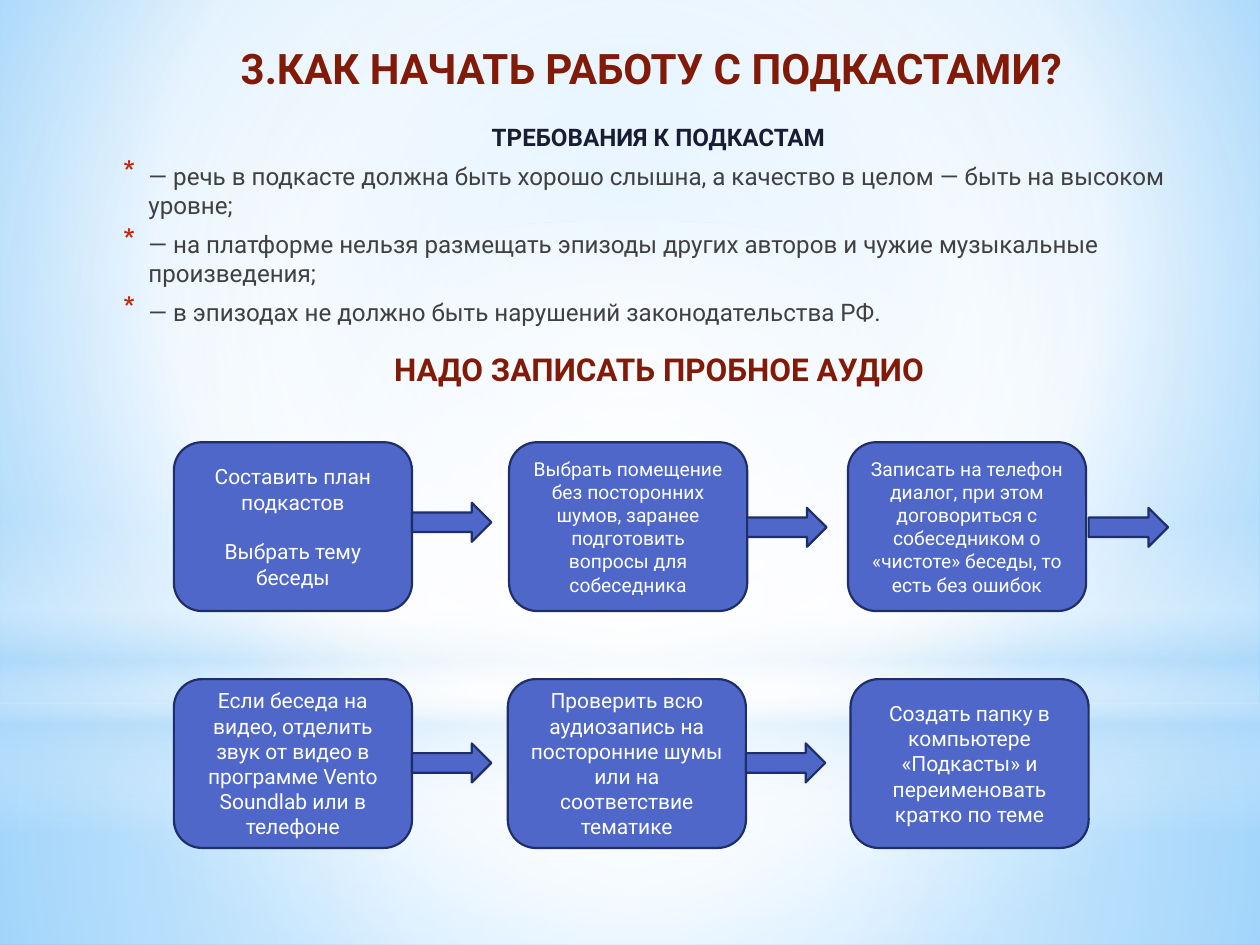
from dataclasses import dataclass
from typing import Any, Optional

from pptx import Presentation
from pptx.dml.color import RGBColor
from pptx.enum.shapes import MSO_SHAPE as Preset
from pptx.enum.text import MSO_ANCHOR as Anchor, PP_ALIGN as Align
from pptx.oxml import parse_xml
from pptx.oxml.ns import nsdecls, qn
from pptx.util import Inches, Pt

FONT = "Roboto"
DARK_RED, NAVY, GRAY, WHITE = "821A08", "191D34", "404040", "FFFFFF"
BLUE, OUTLINE, BULLET = "4E67C8", "1F2E69", "C3260C"
SKY = "B4DCFA"
BOX_WIDTH, BOX_HEIGHT = 1.89, 1.34
ARROW_WIDTH, ARROW_HEIGHT = 0.63, 0.31
TOP_ROW, BOTTOM_ROW = 3.51, 5.39


@dataclass
class Stop:
    position: int
    color: str
    opacity: int = 100


@dataclass
class Glow:
    preset: Any
    frame: tuple[float, float, float, float]
    stops: list[Stop]
    center: Optional[tuple[int, int, int, int]] = (50, 50, 50, 50)


@dataclass
class Step:
    left: float
    top: float
    lines: list[str]
    size: float = 12
    arrow_top: Optional[float] = None
    arrow_gap: float = 0


BACKDROP = [Stop(0, "9ED5FF"), Stop(60, WHITE), Stop(100, "5BB9FF")]
GLOWS = [
    Glow(Preset.RECTANGLE, (0, 5.58, 10, 1.92),
         [Stop(0, WHITE, 91), Stop(37, WHITE, 76), Stop(100, SKY, 79)]),
    Glow(Preset.RECTANGLE, (0, 0, 10, 5.58),
         [Stop(0, WHITE, 89), Stop(48, WHITE, 62), Stop(100, SKY, 79)]),
    Glow(Preset.RECTANGLE, (0, 4.12, 10, 2.5),
         [Stop(0, WHITE, 0), Stop(29, WHITE, 30), Stop(45, SKY, 40),
          Stop(55, WHITE, 26), Stop(65, SKY, 60), Stop(100, WHITE, 0)], None),
    Glow(Preset.OVAL, (0, 1.75, 10, 5.58),
         [Stop(0, WHITE), Stop(56, WHITE, 0)]),
]
REQUIREMENTS = [
    "— речь в подкасте должна быть хорошо слышна, а качество в целом — быть на высоком уровне;",
    "— на платформе нельзя размещать эпизоды других авторов и чужие музыкальные произведения;",
    "— в эпизодах не должно быть нарушений законодательства РФ.",
]
STEPS = [
    Step(1.38, TOP_ROW, ["Составить план подкастов", "Выбрать тему беседы"], arrow_top=3.99),
    Step(4.04, TOP_ROW, ["Выбрать помещение без посторонних шумов, заранее подготовить "
                         "вопросы для собеседника"], 11, 4.03),
    Step(6.73, TOP_ROW, ["Записать на телефон диалог, при этом договориться с собеседником "
                         "о «чистоте» беседы, то есть без ошибок"], 11, 4.03, 0.02),
    Step(1.38, BOTTOM_ROW, ["Если беседа на видео, отделить звук от видео в программе "
                            "Vento Soundlab или в телефоне"], arrow_top=5.9),
    Step(4.03, BOTTOM_ROW, ["Проверить всю аудиозапись на посторонние шумы или на "
                            "соответствие тематике"], arrow_top=5.9),
    Step(6.75, BOTTOM_ROW, ["Создать папку в компьютере «Подкасты» и переименовать "
                            "кратко по теме"]),
]


def rgb(color: str) -> RGBColor:
    return RGBColor.from_string(color)


def apply(target: Any, values: dict[str, Any]) -> None:
    for name, value in values.items():
        setattr(target, name, value)


def set_gradient(fill: Any, owner: Any, stops: list[Stop],
                 center: Optional[tuple[int, int, int, int]]) -> None:
    fill.gradient()
    marks = "".join(
        f'<a:gs pos="{stop.position * 1000}"><a:srgbClr val="{stop.color}">'
        f'<a:alpha val="{stop.opacity * 1000}"/></a:srgbClr></a:gs>'
        for stop in stops
    )
    shade = '<a:lin ang="5400000" scaled="0"/>'
    if center:
        sides = " ".join(f'{side}="{part * 1000}"' for side, part in zip("ltrb", center))
        shade = f'<a:path path="circle"><a:fillToRect {sides}/></a:path>'
    old = owner.find(".//" + qn("a:gradFill"))
    old.getparent().replace(old, parse_xml(
        f'<a:gradFill {nsdecls("a")} rotWithShape="1"><a:gsLst>{marks}</a:gsLst>{shade}</a:gradFill>'
    ))


def add_preset(page: Any, preset: Any, frame: tuple[float, ...]) -> Any:
    shape = page.shapes.add_shape(preset, *map(Inches, frame))
    shape.shadow.inherit = False
    return shape


def add_block(page: Any, preset: Any, frame: tuple[float, ...]) -> Any:
    block = add_preset(page, preset, frame)
    block.fill.solid()
    block.fill.fore_color.rgb = rgb(BLUE)
    block.line.color.rgb = rgb(OUTLINE)
    block.line.width = Pt(1.25)
    return block


def write(para: Any, text: str, size: float, color: str, bold: bool = False,
          **layout: Any) -> None:
    apply(para, layout)
    span = para.add_run()
    span.text = text
    apply(span.font, {"name": FONT, "size": Pt(size), "bold": bold})
    span.font.color.rgb = rgb(color)


def add_text(page: Any, frame: tuple[float, ...], wrap: bool = True) -> Any:
    box = page.shapes.add_textbox(*map(Inches, frame))
    apply(box.text_frame, {"word_wrap": wrap, "vertical_anchor": Anchor.TOP})
    return box.text_frame


def indent(para: Any, margin: float, hanging: float = 0, bullet: str = "") -> None:
    properties = para._p.get_or_add_pPr()
    properties.set("marL", str(Inches(margin)))
    properties.set("indent", str(Inches(-hanging)))
    if bullet:
        for mark in (f'<a:buClr {nsdecls("a")}><a:srgbClr val="{BULLET}"/></a:buClr>',
                     f'<a:buSzPct {nsdecls("a")} val="130000"/>',
                     f'<a:buChar {nsdecls("a")} char="{bullet}"/>'):
            properties.append(parse_xml(mark))


def add_requirements(page: Any) -> None:
    frame = add_text(page, (0.83, 0.92, 8.74, 1.57))
    heading = frame.paragraphs[0]
    indent(heading, 0.05)
    write(heading, "ТРЕБОВАНИЯ К ПОДКАСТАМ", 13.8, NAVY, True,
          alignment=Align.CENTER, space_after=Pt(3))
    for text in REQUIREMENTS:
        para = frame.add_paragraph()
        indent(para, 0.25, 0.2, "*")
        write(para, text, 13.8, GRAY, space_before=Pt(2.76), space_after=Pt(3))


def add_step(page: Any, step: Step) -> None:
    block = add_block(page, Preset.ROUNDED_RECTANGLE,
                      (step.left, step.top, BOX_WIDTH, BOX_HEIGHT))
    frame = block.text_frame
    apply(frame, {"word_wrap": True, "vertical_anchor": Anchor.MIDDLE})
    for index, line in enumerate(step.lines):
        para = frame.add_paragraph() if index else frame.paragraphs[0]
        write(para, line, step.size, WHITE, alignment=Align.CENTER,
              space_before=Pt(14 if index else 0))
    if step.arrow_top is not None:
        left = step.left + BOX_WIDTH + step.arrow_gap
        add_block(page, Preset.RIGHT_ARROW, (left, step.arrow_top, ARROW_WIDTH, ARROW_HEIGHT))


def main() -> None:
    deck = Presentation()
    apply(deck, {"slide_width": Inches(10), "slide_height": Inches(7.5)})
    page = deck.slides.add_slide(deck.slide_layouts[6])
    set_gradient(page.background.fill, page.element, BACKDROP, (20, 10, 20, 60))
    for glow in GLOWS:
        shape = add_preset(page, glow.preset, glow.frame)
        shape.line.fill.background()
        set_gradient(shape.fill, shape.element, glow.stops, glow.center)
    add_requirements(page)
    for step in STEPS:
        add_step(page, step)
    title = add_text(page, (1.61, 0.29, 7.12, 0.63))
    write(title.paragraphs[0], "3.КАК НАЧАТЬ РАБОТУ С ПОДКАСТАМИ?", 24, DARK_RED, True,
          alignment=Align.CENTER)
    subtitle = add_text(page, (3.03, 2.73, 4.55, 0.4), wrap=False)
    write(subtitle.paragraphs[0], "НАДО ЗАПИСАТЬ ПРОБНОЕ АУДИО", 18, DARK_RED, True)
    deck.save("out.pptx")


if __name__ == "__main__":
    main()
